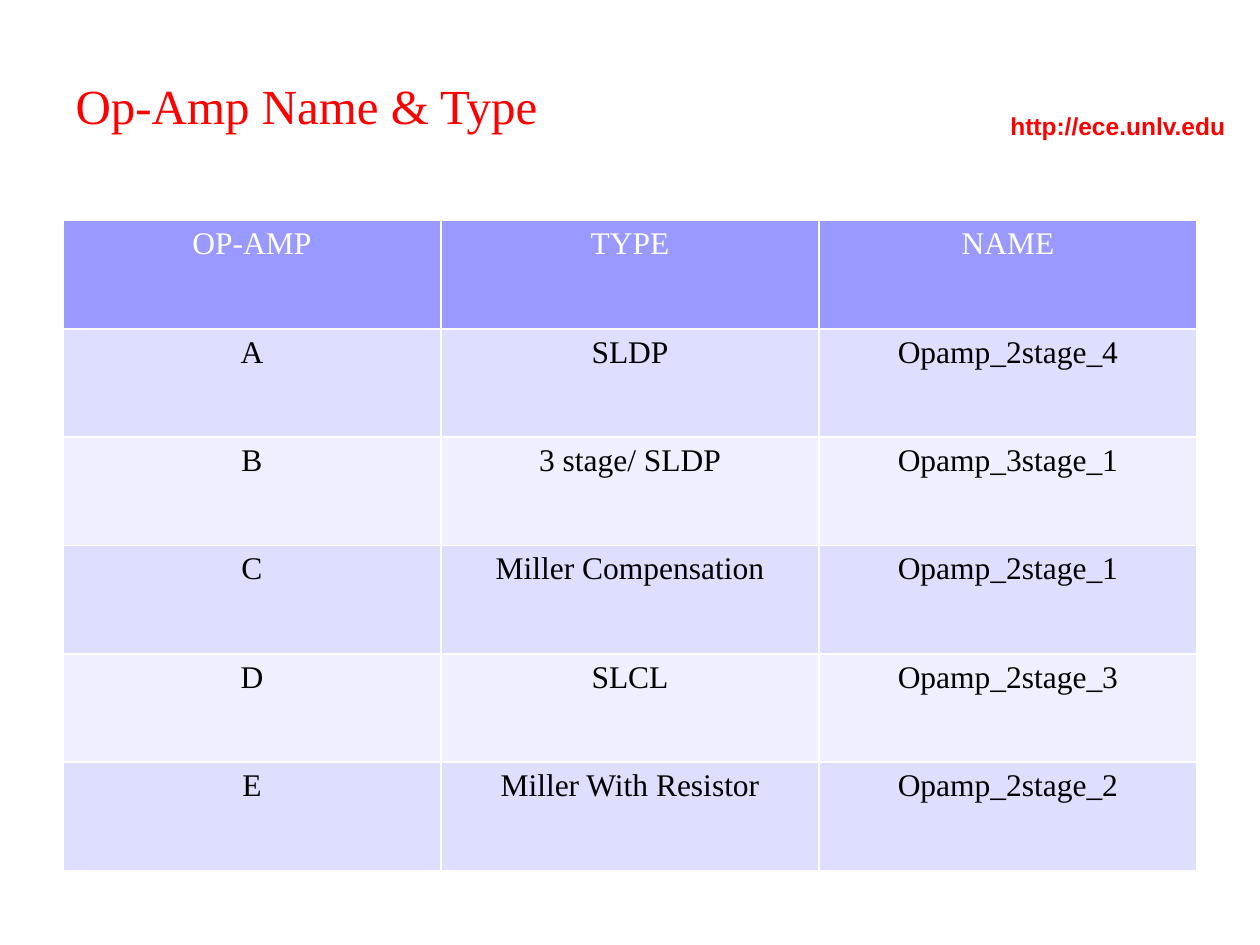
import pptx
import pptx.util
import pptx.dml.color
import pptx.enum.text

Inches = pptx.util.Inches
RGBColor = pptx.dml.color.RGBColor
PP_ALIGN = pptx.enum.text.PP_ALIGN
MSO_ANCHOR = pptx.enum.text.MSO_ANCHOR
MSO_AUTO_SIZE = pptx.enum.text.MSO_AUTO_SIZE

RED = RGBColor(0xFF, 0x00, 0x00)
WHITE = RGBColor(0xFF, 0xFF, 0xFF)
BLACK = RGBColor(0x00, 0x00, 0x00)
HEADER_FILL = RGBColor(0x99, 0x99, 0xFF)
BAND_FILLS = (RGBColor(0xEF, 0xEF, 0xFF), RGBColor(0xDE, 0xDE, 0xFF))

SERIF = "Times New Roman"
SANS = "Arial"
MARGIN = 0.5
COL_WIDTH = 3
ROW_HEIGHT = 0.86

OP_AMPS = [
    ("OP-AMP", "TYPE", "NAME"),
    ("A", "SLDP", "Opamp_2stage_4"),
    ("B", "3 stage/ SLDP", "Opamp_3stage_1"),
    ("C", "Miller Compensation", "Opamp_2stage_1"),
    ("D", "SLCL", "Opamp_2stage_3"),
    ("E", "Miller With Resistor", "Opamp_2stage_2"),
]


def write(tf, text, size, color, font=SERIF, bold=False, align=PP_ALIGN.LEFT):
    p = tf.paragraphs[0]
    p.alignment = align
    r = p.add_run()
    r.text = text
    r.font.name = font
    r.font.size = pptx.util.Pt(size)
    r.font.bold = bold
    r.font.color.rgb = color


def format_title(s, text):
    sp = s.shapes.title
    sp.left, sp.top = Inches(MARGIN), Inches(0.5)
    sp.width, sp.height = Inches(7.17), Inches(0.67)
    tf = sp.text_frame
    tf.auto_size = MSO_AUTO_SIZE.NONE
    tf.vertical_anchor = MSO_ANCHOR.MIDDLE
    write(tf, text, 28, RED)


def add_web_address(s, text):
    sp = s.shapes.add_textbox(Inches(7.92), Inches(0.83), Inches(1.92), Inches(0.34))
    tf = sp.text_frame
    tf.word_wrap = False
    write(tf, text, 14, RED, font=SANS, bold=True)


def add_op_amp_table(s, rows):
    n_rows, n_cols = len(rows), len(rows[0])
    # The default table style supplies the white cell borders
    table = s.shapes.add_table(
        n_rows, n_cols, Inches(MARGIN), Inches(1.75),
        Inches(n_cols * COL_WIDTH), Inches(n_rows * ROW_HEIGHT)).table
    for i, row in enumerate(rows):
        fill = BAND_FILLS[i % 2] if i else HEADER_FILL
        color = BLACK if i else WHITE
        for j, text in enumerate(row):
            cell = table.cell(i, j)
            cell.fill.solid()
            cell.fill.fore_color.rgb = fill
            write(cell.text_frame, text, 18, color, align=PP_ALIGN.CENTER)


def main():
    prs = pptx.Presentation()
    prs.slide_width, prs.slide_height = Inches(10), Inches(7.5)
    s = prs.slides.add_slide(prs.slide_layouts[5])

    # Heading
    add_web_address(s, "http://ece.unlv.edu")
    format_title(s, "Op-Amp Name & Type")

    # Op-amp overview
    add_op_amp_table(s, OP_AMPS)

    prs.save("out.pptx")


if __name__ == "__main__":
    main()
